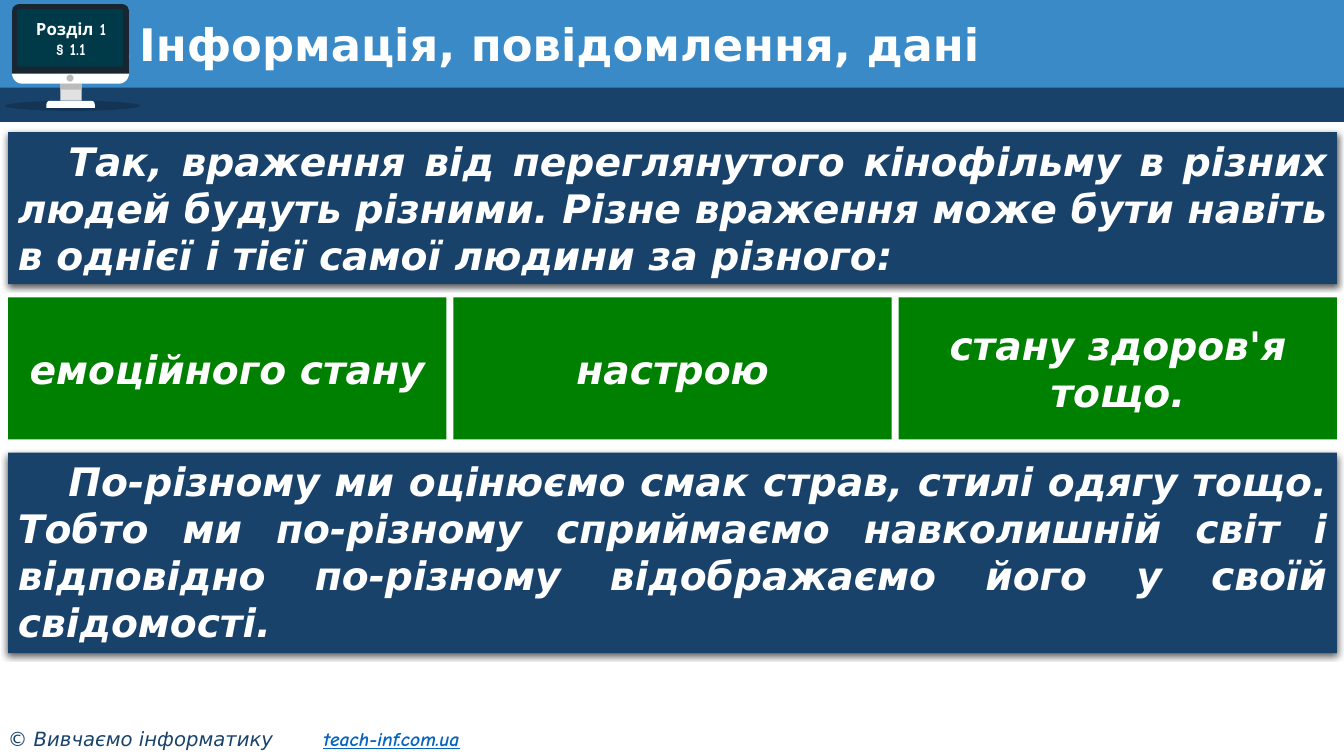
from lxml import etree
from pptx import Presentation
from pptx.dml.color import RGBColor
from pptx.enum.shapes import MSO_SHAPE
from pptx.enum.text import MSO_ANCHOR, MSO_AUTO_SIZE, PP_ALIGN
from pptx.oxml.ns import qn
from pptx.util import Inches, Pt

RECT, OVAL = MSO_SHAPE.RECTANGLE, MSO_SHAPE.OVAL
ROUND, ROUND_TOP = MSO_SHAPE.ROUNDED_RECTANGLE, MSO_SHAPE.ROUND_2_SAME_RECTANGLE
TOP, MIDDLE = MSO_ANCHOR.TOP, MSO_ANCHOR.MIDDLE
LEFT, CENTER, JUSTIFY = PP_ALIGN.LEFT, PP_ALIGN.CENTER, PP_ALIGN.JUSTIFY

COLORS = {
    "sky": "398AC7", "navy": "19426B", "green": "008000", "white": "FFFFFF",
    "black": "000000", "case": "182632", "screen": "003948",
    "neck": "E1E1E1", "grey": "BBBBBB", "link": "0563C1",
}
SANS, COMIC = "DejaVu Sans", "Comic Neue"
BODY = {"name": SANS, "size": Pt(28), "bold": True, "italic": True, "color": "white"}
HEADING = {"name": SANS, "size": Pt(32), "bold": True, "color": "white"}
BADGE = {"name": COMIC, "size": Pt(12), "bold": True, "color": "white"}
CREDIT = {"name": SANS, "size": Pt(14), "italic": True, "color": "navy"}
ADDRESS = {"name": COMIC, "size": Pt(14), "bold": True, "italic": True,
           "underline": True, "color": "link"}

INTRO = ("Так, враження від переглянутого кінофільму в різних людей будуть різними. "
         "Різне враження може бути навіть в однієї і тієї самої людини за різного:")
CAUSES = ["емоційного стану", "настрою", "стану здоров'я тощо."]
CONCLUSION = ("По-різному ми оцінюємо смак страв, стилі одягу тощо. Тобто ми по-різному "
              "сприймаємо навколишній світ і відповідно по-різному відображаємо його "
              "у своїй свідомості.")


def inches(box):
    return [Inches(length) for length in box]


def style(font, formats):
    for name, value in formats.items():
        if name == "color":
            font.color.rgb = RGBColor.from_string(COLORS[value])
        else:
            setattr(font, name, value)


def add_span(para, text, formats):
    span = para.add_run()
    span.text = text
    style(span.font, formats)


def set_frame(frame, anchor):
    frame.word_wrap = True
    frame.auto_size = MSO_AUTO_SIZE.NONE
    frame.vertical_anchor = anchor


def add_block(page, box, color, kind=RECT, radius=None):
    block = page.shapes.add_shape(kind, *inches(box))
    block.shadow.inherit = False
    block.fill.solid()
    block.fill.fore_color.rgb = RGBColor.from_string(COLORS[color])
    block.line.fill.background()
    if radius is not None:
        block.adjustments[0] = radius
    return block


def add_body(block, text, align, anchor):
    set_frame(block.text_frame, anchor)
    para = block.text_frame.paragraphs[0]
    para.alignment = align
    add_span(para, text, BODY)
    return para


def add_header(page, box):
    left, top, width, height = box
    add_block(page, (left, top, width, 0.91), "sky")
    add_block(page, (left, top + 0.87, width, height - 0.87), "navy")

    # Title goes above the bands
    title = page.shapes.title
    title.left, title.top, title.width, title.height = inches(
        (left + 1.28, top + 0.18, 9.9, 0.58))
    set_frame(title.text_frame, MIDDLE)
    para = title.text_frame.paragraphs[0]
    para.alignment = LEFT
    para.line_spacing = 0.9
    add_span(para, "Інформація, повідомлення, дані", HEADING)
    title.element.getparent().append(title.element)


def add_monitor(page, box):
    left, top, width, height = box
    parts = [  # offset from the box, colour, shape, corner radius
        ((0, 0.96, width, 0.1), "black", OVAL, None),
        ((0.55, 0.79, 0.21, 0.17), "neck", RECT, None),
        ((0.55, 0.79, 0.21, 0.06), "grey", RECT, None),
        ((0.41, 0.96, 0.48, 0.07), "white", ROUND_TOP, 0.5),
        ((0.07, 0.4, 1.16, 0.39), "white", ROUND, 0.26),
        ((0.07, 0, 1.16, 0.69), "case", ROUND_TOP, 0.1),
        ((0.61, 0.7, 0.07, 0.07), "grey", OVAL, None),
        ((0.12, 0.05, 1.05, 0.57), "screen", ROUND, 0.04),
    ]
    for (x, y, w, h), color, kind, radius in parts:
        block = add_block(page, (left + x, top + y, w, h), color, kind, radius)
        if color == "black":
            shade = block.element.spPr.find(".//" + qn("a:srgbClr"))
            etree.SubElement(shade, qn("a:alpha"), val="20000")

    # Section number on the screen
    badge = page.shapes.add_textbox(*inches((left + 0.08, top + 0.05, 1.15, 0.59)))
    frame = badge.text_frame
    set_frame(frame, MIDDLE)
    for index, text in enumerate(["Розділ 1", "§ 1.1"]):
        para = frame.add_paragraph() if index else frame.paragraphs[0]
        para.alignment = CENTER
        add_span(para, text, BADGE)


def add_panel(page, box, text):
    panel = add_block(page, box, "navy")
    effects = panel.element.spPr.find(qn("a:effectLst"))
    shadow = etree.SubElement(effects, qn("a:outerShdw"), blurRad=str(Pt(4.5)),
                              dist=str(Pt(1.5)), dir="5400000", algn="t", rotWithShape="0")
    shade = etree.SubElement(shadow, qn("a:srgbClr"), val=COLORS["black"])
    etree.SubElement(shade, qn("a:alpha"), val="63000")
    para = add_body(panel, text, JUSTIFY, TOP)
    para._p.get_or_add_pPr().set("indent", str(Inches(0.5)))


def add_causes(page, box, gap=0.07):
    left, top, width, height = box
    card = (width - gap * (len(CAUSES) - 1)) / len(CAUSES)
    for index, text in enumerate(CAUSES):
        block = add_block(page, (left + index * (card + gap), top, card, height), "green")
        add_body(block, text, CENTER, MIDDLE)


def add_footer(page, box):
    footer = page.shapes.add_textbox(*inches(box))
    set_frame(footer.text_frame, TOP)
    para = footer.text_frame.paragraphs[0]
    tabs = etree.SubElement(para._p.get_or_add_pPr(), qn("a:tabLst"))
    etree.SubElement(tabs, qn("a:tab"), pos=str(Inches(3.13)), algn="l")
    add_span(para, "© Вивчаємо інформатику\t", CREDIT)
    add_span(para, "teach-inf.com.ua", ADDRESS)


def main():
    deck = Presentation()
    deck.slide_width, deck.slide_height = Inches(13.33), Inches(7.5)
    page = deck.slides.add_slide(deck.slide_layouts[5])
    add_header(page, (0, 0, 13.33, 1.21))
    add_monitor(page, (0.05, 0.04, 1.34, 1.06))
    add_panel(page, (0.08, 1.31, 13.18, 1.51), INTRO)
    add_causes(page, (0.08, 2.95, 13.18, 1.41))
    add_panel(page, (0.08, 4.49, 13.18, 1.99), CONCLUSION)
    add_footer(page, (-0.02, 7.16, 5.23, 0.34))
    deck.save("out.pptx")


if __name__ == "__main__":
    main()
